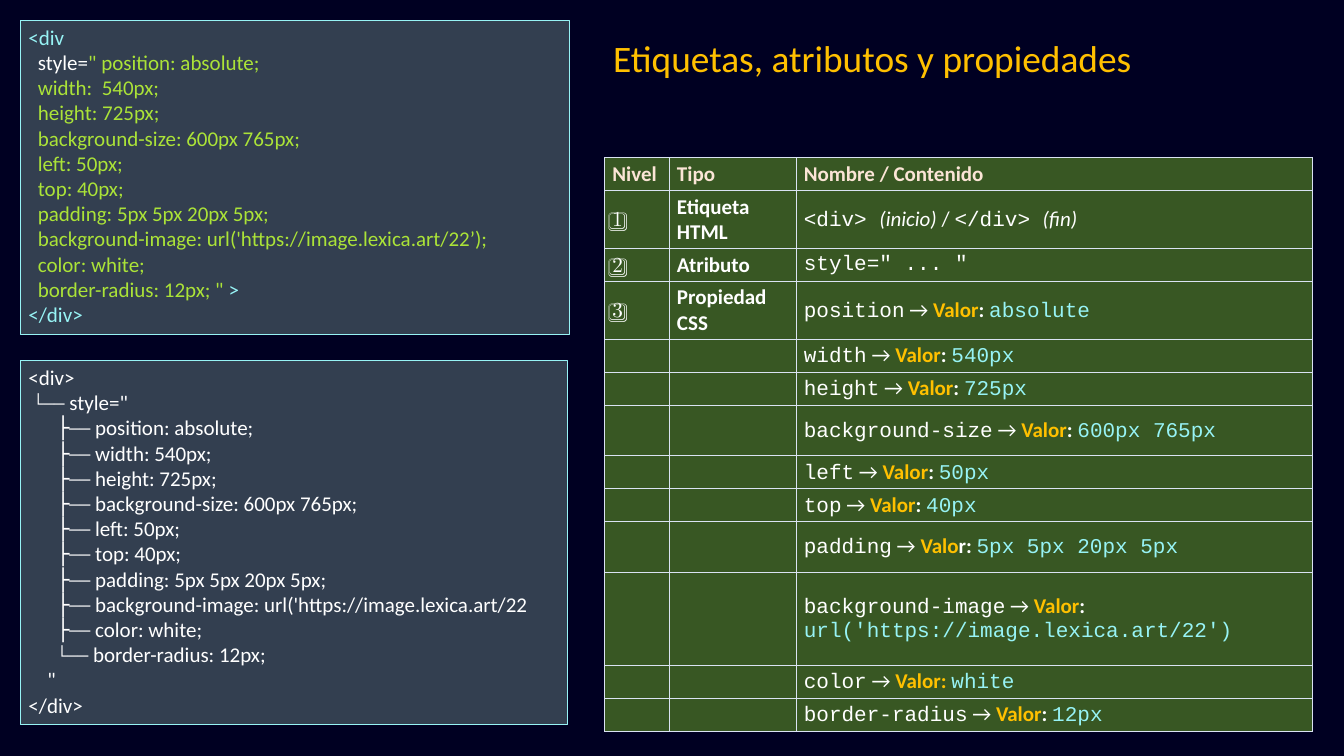
from lxml import etree
from pptx import Presentation
from pptx import util as u
from pptx.dml.color import RGBColor
from pptx.enum import shapes, text
from pptx.oxml import ns

# Slide grid: 16 columns by 9 rows
COL = ROW = u.Inches(1)
SANS, MONO = "Calibri", "Courier New"
WHITE, CYAN, LIME, GOLD = "FFFFFF", "97F3F5", "ABE338", "FFC000"
PANEL, GREEN, CREAM, BORDER = "333F50", "385723", "FBE5D6", "DAE3F3"

DECLARATIONS = """\
  width:  540px;
  height: 725px;
  background-size: 600px 765px;
  left: 50px;
  top: 40px;
  padding: 5px 5px 20px 5px;
  background-image: url('https://image.lexica.art/22’);
  color: white;"""

TREE = """\
<div>
 └── style="
      ├── position: absolute;
      ├── width: 540px;
      ├── height: 725px;
      ├── background-size: 600px 765px;
      ├── left: 50px;
      ├── top: 40px;
      ├── padding: 5px 5px 20px 5px;
      ├── background-image: url('https://image.lexica.art/22
      ├── color: white;
      └── border-radius: 12px;
    "
</div>"""

# Property, value, row height, number of gold letters in "Valor: "
PROPERTIES = [
    ("position", "absolute", 0.69, 5),
    ("width", "540px", 0.39, 5),
    ("height", "725px", 0.39, 5),
    ("background-size", "600px 765px", 0.6, 5),
    ("left", "50px", 0.39, 5),
    ("top", "40px", 0.39, 5),
    ("padding", "5px 5px 20px 5px", 0.6, 4),
    ("background-image", "url('https://image.lexica.art/22')", 1.11, 5),
    ("color", "white", 0.39, 7),
    ("border-radius", "12px", 0.39, 5),
]


def rgb(value):
    return RGBColor.from_string(value)


def run(content, color=WHITE, face=SANS, bold=False, italic=False):
    return content, color, face, bold, italic


def write(tf, lines, size=18):
    """Fill a text frame; each line is a list of runs."""
    for i, runs in enumerate(lines):
        p = tf.add_paragraph() if i else tf.paragraphs[0]
        p.alignment = text.PP_ALIGN.LEFT
        p.font.size = u.Pt(size)
        for content, color, face, bold, italic in runs:
            r = p.add_run()
            r.text = content
            font = p.font if len(runs) == 1 else r.font
            font.name, font.bold, font.italic = face, bold, italic
            font.color.rgb = rgb(color)


def add_panel(s, left, top, width, height, lines):
    sp = s.shapes.add_shape(shapes.MSO_SHAPE.RECTANGLE, int(left * COL),
                            int(top * ROW), int(width * COL), int(height * ROW))
    sp.shadow.inherit = False
    sp.fill.solid()
    sp.fill.fore_color.rgb = rgb(PANEL)
    sp.line.color.rgb = rgb(CYAN)
    sp.line.width = u.Pt(0.75)
    tf = sp.text_frame
    tf.word_wrap = True
    tf.vertical_anchor = text.MSO_ANCHOR.TOP
    write(tf, lines)


def add_title(s, left, top, width, height, title):
    sp = s.shapes.add_textbox(int(left * COL), int(top * ROW),
                              int(width * COL), int(height * ROW))
    sp.text_frame.word_wrap = True
    write(sp.text_frame, [[run(title, GOLD)]], 32)


def style_cell(cell):
    cell.margin_left = cell.margin_right = u.Inches(0.09)
    cell.margin_top = cell.margin_bottom = u.Inches(0.04)
    cell.vertical_anchor = text.MSO_ANCHOR.MIDDLE
    tcPr = cell._tc.get_or_add_tcPr()
    for side in ("lnL", "lnR", "lnT", "lnB"):
        ln = etree.SubElement(tcPr, ns.qn(f"a:{side}"), w=str(u.Pt(1)))
        fill = etree.SubElement(ln, ns.qn("a:solidFill"))
        etree.SubElement(fill, ns.qn("a:srgbClr"), val=BORDER)
    cell.fill.solid()
    cell.fill.fore_color.rgb = rgb(GREEN)


def add_grid(s, left, top, widths, heights, rows):
    frame = s.shapes.add_table(len(rows), len(widths), int(left * COL),
                               int(top * ROW), int(sum(widths) * COL),
                               int(sum(heights) * ROW))
    table = frame.table
    table.first_row = table.horz_banding = False
    for column, width in zip(table.columns, widths):
        column.width = int(width * COL)
    for row, height, contents in zip(table.rows, heights, rows):
        row.height = int(height * ROW)
        for cell, runs in zip(row.cells, contents):
            style_cell(cell)
            write(cell.text_frame, [runs])


def property_runs(name, value, gold):
    label = "Valor: "
    runs = [run(name, face=MONO), run(" → "),
            run(label[:gold], GOLD, bold=True)]
    if label[gold:]:
        runs.append(run(label[gold:], bold=True))
    return runs + [run(value, CYAN, MONO)]


def table_rows():
    header = [[run(name, CREAM, bold=True)]
              for name in ("Nivel", "Tipo", "Nombre / Contenido")]
    tag = [run("<div> ", face=MONO), run("(inicio)", italic=True), run(" / "),
           run("</div> ", face=MONO), run("(fin)", italic=True)]
    levels = [
        ("1️⃣", "Etiqueta HTML", tag),
        ("2️⃣", "Atributo", [run('style=" ... "', face=MONO)]),
    ]
    for i, (name, value, _, gold) in enumerate(PROPERTIES):
        level, kind = ("", "") if i else ("3️⃣", "Propiedad CSS")
        levels.append((level, kind, property_runs(name, value, gold)))
    return [header] + [
        [[run(level)] if level else [],
         [run(kind, bold=True)] if kind else [], runs]
        for level, kind, runs in levels]


def main():
    prs = Presentation()
    prs.slide_width, prs.slide_height = 16 * COL, 9 * ROW
    s = prs.slides.add_slide(prs.slide_layouts[6])
    s.background.fill.solid()
    s.background.fill.fore_color.rgb = rgb("000022")

    # Table of tags, attributes and properties
    heights = [0.39, 0.69, 0.39] + [height for _, _, height, _ in PROPERTIES]
    add_grid(s, 7.2, 1.88, (0.77, 1.51, 6.15), heights, table_rows())

    # Tree view of the element
    add_panel(s, 0.24, 4.29, 6.52, 4.34,
              [[run(line)] for line in TREE.splitlines()])

    # Source code of the element
    code = [[run("<div", CYAN)],
            [run("  style="), run('" position: absolute;', LIME)]]
    code += [[run(line, LIME)] for line in DECLARATIONS.splitlines()]
    code += [[run('  border-radius: 12px; " ', LIME), run(">", CYAN)],
             [run("</div>", CYAN)]]
    add_panel(s, 0.24, 0.24, 6.54, 3.74, code)

    # Title
    add_title(s, 7.2, 0.37, 6.45, 0.64, "Etiquetas, atributos y propiedades")
    prs.save("out.pptx")


if __name__ == "__main__":
    main()
